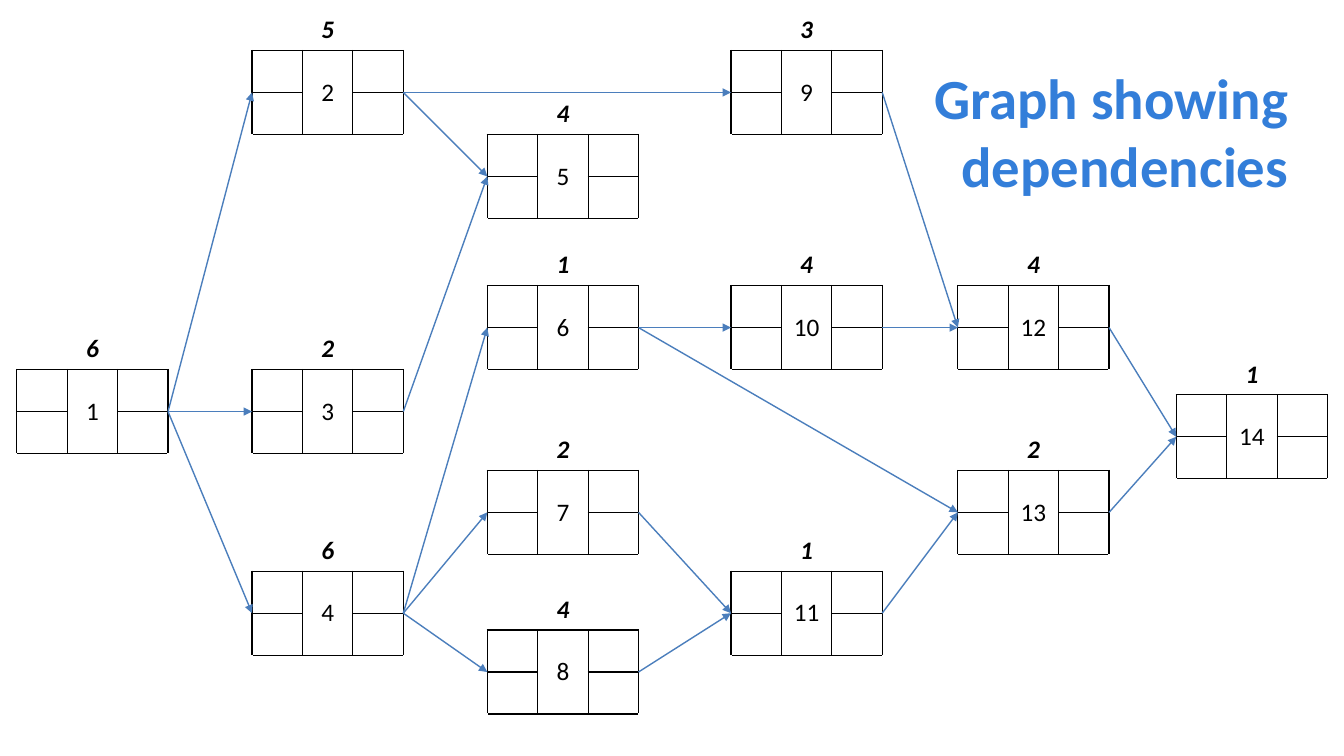
from lxml import etree
from pptx import Presentation
from pptx import util as u
from pptx.dml import color
from pptx.enum import shapes, text
from pptx.oxml import ns

FONT = "Calibri"
BLACK, WHITE, ARROW_BLUE, TITLE_BLUE = "000000", "FFFFFF", "4B7EBC", "337ED9"
UNITS_PER_INCH = 12
CELL_WIDTH, CELL_HEIGHT = 6, 5
COLUMN_LEFTS = [2, 30, 58, 87, 114, 140]

# task: (column, centre height, duration)
TASKS = {
    14: (5, 52, 1),
    12: (4, 39, 4),
    13: (4, 61, 2),
    9: (3, 11, 3),
    10: (3, 39, 4),
    11: (3, 73, 1),
    5: (2, 21, 4),
    6: (2, 39, 1),
    7: (2, 61, 2),
    8: (2, 80, 4),
    2: (1, 11, 5),
    3: (1, 49, 2),
    4: (1, 73, 6),
    1: (0, 49, 6),
}
DEPENDENCIES = [
    (1, 2), (1, 4), (1, 3), (2, 9), (2, 5), (3, 5),
    (4, 6), (4, 7), (4, 8), (7, 11), (8, 11), (6, 13),
    (6, 10), (9, 12), (12, 14), (13, 14), (11, 13), (10, 12),
]


def rgb(value):
    return color.RGBColor.from_string(value)


def units(count):
    return u.Inches(count / UNITS_PER_INCH)


def set_values(target, values):
    for name, value in values.items():
        setattr(target, name, value)


def write(paragraph, words, align, colour, **font_values):
    paragraph.alignment = align
    run = paragraph.add_run()
    run.text = words
    set_values(run.font, {"name": FONT, **font_values})
    run.font.color.rgb = rgb(colour)


def add_title(slide, words):
    title = slide.shapes.add_textbox(
        u.Inches(9.08), u.Inches(0.42), u.Inches(3.75), u.Inches(1.75))
    set_values(title.text_frame, {
        "word_wrap": True,
        "vertical_anchor": text.MSO_ANCHOR.MIDDLE,
        "margin_left": u.Inches(0.1),
        "margin_right": u.Inches(0.05),
        "margin_top": u.Inches(0.05),
        "margin_bottom": u.Inches(0.05),
    })
    write(title.text_frame.paragraphs[0], words, text.PP_ALIGN.RIGHT,
          TITLE_BLUE, size=u.Pt(40.5), bold=True)


def set_borders(cell, colours):
    properties = cell._tc.get_or_add_tcPr()
    for side, colour in zip("LRTB", colours):
        border = etree.SubElement(
            properties, ns.qn(f"a:ln{side}"), w=str(u.Pt(1)))
        fill = etree.SubElement(border, ns.qn("a:solidFill"))
        etree.SubElement(fill, ns.qn("a:srgbClr"), val=colour)


def format_cells(table):
    borders = {0: (WHITE, WHITE, WHITE, BLACK), 3: (WHITE, WHITE, BLACK, WHITE)}
    for row_number, row in enumerate(table.rows):
        for cell in row.cells:
            set_borders(cell, borders.get(row_number, [BLACK] * 4))
            if row_number in borders:
                cell.fill.background()
            else:
                cell.fill.solid()
                cell.fill.fore_color.rgb = rgb(WHITE)


def add_task(slide, number, column, centre, duration):
    table = slide.shapes.add_table(
        4, 3, units(COLUMN_LEFTS[column]), units(centre - 2 * CELL_HEIGHT),
        units(3 * CELL_WIDTH), units(4 * CELL_HEIGHT)).table
    set_values(table, {"first_row": False, "horz_banding": False})
    format_cells(table)
    for first, last in [((0, 0), (0, 2)), ((1, 1), (2, 1)), ((3, 0), (3, 2))]:
        table.cell(*first).merge(table.cell(*last))
    labels = [
        (table.cell(0, 0), duration, text.MSO_ANCHOR.BOTTOM, True),
        (table.cell(1, 1), number, text.MSO_ANCHOR.MIDDLE, False),
    ]
    for cell, value, anchor, emphasis in labels:
        cell.vertical_anchor = anchor
        write(cell.text_frame.paragraphs[0], str(value), text.PP_ALIGN.CENTER,
              BLACK, size=u.Pt(18), bold=emphasis, italic=emphasis)


def add_dependency(slide, before, after):
    start_column, start_height, _ = TASKS[before]
    end_column, end_height, _ = TASKS[after]
    arrow = slide.shapes.add_connector(
        shapes.MSO_CONNECTOR.STRAIGHT,
        units(COLUMN_LEFTS[start_column] + 3 * CELL_WIDTH), units(start_height),
        units(COLUMN_LEFTS[end_column]), units(end_height))
    arrow.line.width = u.Pt(1)
    arrow.line.color.rgb = rgb(ARROW_BLUE)
    etree.SubElement(
        arrow.line._get_or_add_ln(), ns.qn("a:tailEnd"), type="triangle")
    etree.SubElement(arrow._element.spPr, ns.qn("a:effectLst"))


def main():
    deck = Presentation()
    set_values(deck, {"slide_width": u.Inches(13.33),
                      "slide_height": u.Inches(7.5)})
    slide = deck.slides.add_slide(deck.slide_layouts[6])
    add_title(slide, "Graph showing dependencies")
    for number, (column, centre, duration) in TASKS.items():
        add_task(slide, number, column, centre, duration)
    for before, after in DEPENDENCIES:
        add_dependency(slide, before, after)
    deck.save("out.pptx")


if __name__ == "__main__":
    main()
